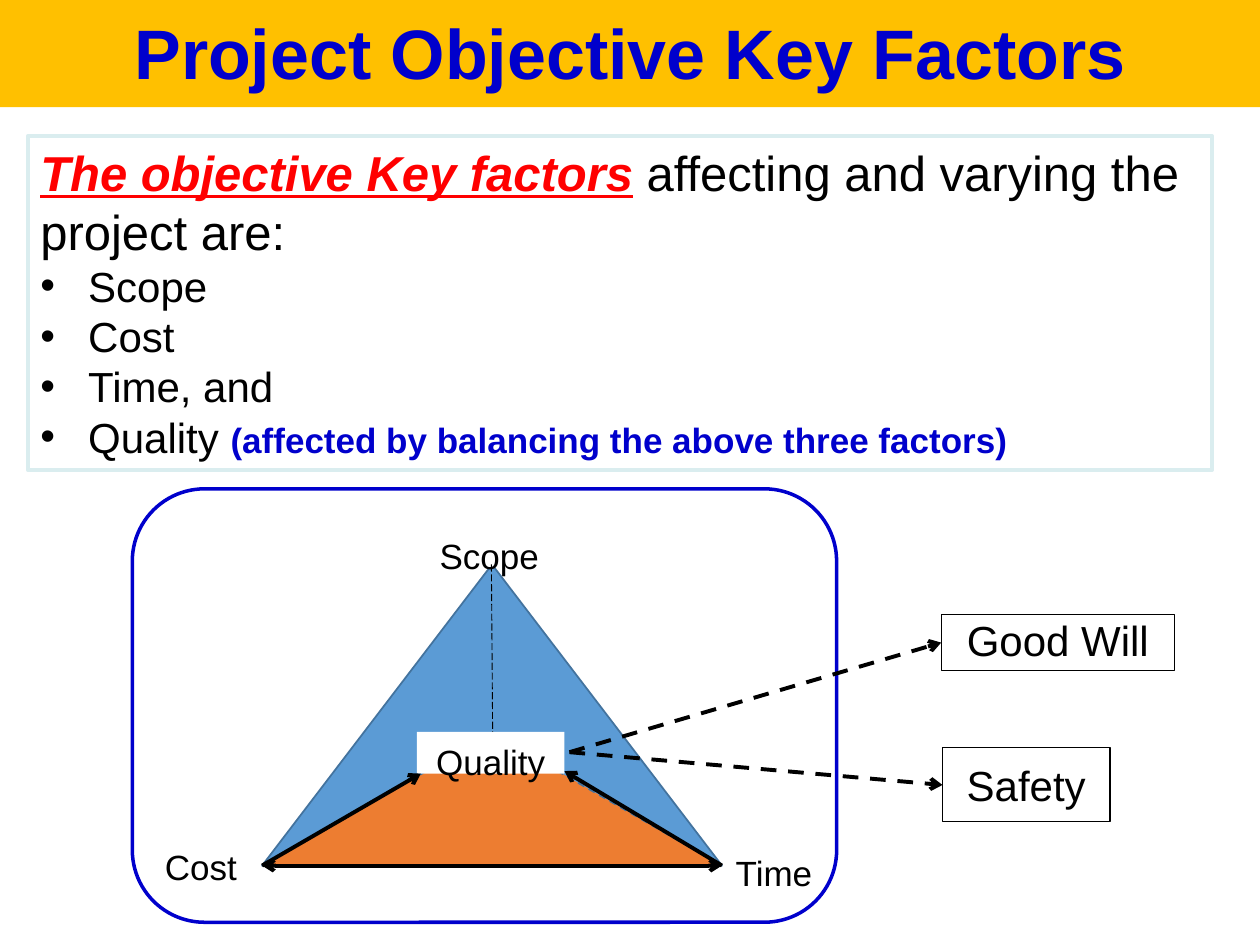
from pptx import Presentation
from pptx import util as u
from pptx.dml.color import RGBColor
from pptx.enum import dml, shapes, text
from pptx.oxml.ns import qn
from lxml import etree

COLORS = {"gold": "FFC000", "navy": "0000CC", "red": "FF0000", "black": "000000",
          "white": "FFFFFF", "blue": "5B9BD5", "steel": "43739E",
          "orange": "ED7D31", "mint": "DAEDEF"}
SHAPE = shapes.MSO_SHAPE
DASH = dml.MSO_LINE
ALIGN = text.PP_ALIGN
ANCHOR = text.MSO_ANCHOR


class SlideKit:
    font = "Arial"

    def __init__(self, prs):
        self.slide = prs.slides.add_slide(prs.slide_layouts[1])

    def place(self, sp, box):
        sp.left, sp.top, sp.width, sp.height = (u.Inches(v) for v in box)

    def paint(self, sp, fill=None, line=None, width=1, dash=None):
        if fill:
            sp.fill.solid()
            sp.fill.fore_color.rgb = RGBColor.from_string(COLORS[fill])
        else:
            sp.fill.background()
        if line:
            self.stroke(sp.line, line, width, dash)
        else:
            sp.line.fill.background()

    def stroke(self, line, color, width, dash=None):
        line.color.rgb = RGBColor.from_string(COLORS[color])
        line.width = u.Pt(width)
        if dash:
            line.dash_style = dash

    def run(self, p, words, size, color="black", **style):
        r = p.add_run()
        r.text = words
        r.font.color.rgb = RGBColor.from_string(COLORS[color])
        for name, value in {"name": self.font, "size": u.Pt(size), "bold": False, **style}.items():
            setattr(r.font, name, value)

    def frame(self, sp, **values):
        tf = sp.text_frame
        defaults = {"word_wrap": True, "auto_size": text.MSO_AUTO_SIZE.NONE,
                    "vertical_anchor": ANCHOR.TOP}
        for name, value in {**defaults, **values}.items():
            setattr(tf, name, value)
        return tf

    def title(self, words, box):
        sp = self.slide.shapes.title
        self.place(sp, box)
        self.paint(sp, "gold")
        p = self.frame(sp, vertical_anchor=ANCHOR.MIDDLE).paragraphs[0]
        p.alignment = ALIGN.CENTER
        self.run(p, words, 40, "navy", bold=True)

    def body(self, paragraphs, box):
        """Fill the body: the first paragraph is plain, the rest are bulleted."""
        sp = self.slide.placeholders[1]
        self.place(sp, box)
        self.paint(sp, None, "mint", 2.25)
        tf = self.frame(sp)
        for i, runs in enumerate(paragraphs):
            p = tf.add_paragraph() if i else tf.paragraphs[0]
            p.space_before = u.Pt(0)
            p.line_spacing = 1.0
            self.bullet(p, "•" if i else None)
            for words, size, style in runs:
                self.run(p, words, size, **style)

    def bullet(self, p, char):
        pPr = p._p.get_or_add_pPr()
        indent = u.Inches(0.38) if char else 0
        pPr.set("marL", str(indent))
        pPr.set("indent", str(-indent))
        if char:
            etree.SubElement(pPr, qn("a:buFont")).set("typeface", self.font)
            etree.SubElement(pPr, qn("a:buChar")).set("char", char)
        else:
            etree.SubElement(pPr, qn("a:buNone"))

    def shape(self, kind, box, **look):
        sp = self.slide.shapes.add_shape(kind, *(u.Inches(v) for v in box))
        sp.shadow.inherit = False
        self.paint(sp, **look)
        return sp

    def label(self, words, box, align=ALIGN.LEFT):
        sp = self.shape(SHAPE.RECTANGLE, box, fill="white")
        p = self.frame(sp).paragraphs[0]
        p.alignment, p.line_spacing, p.space_after = align, 1.06, u.Pt(8)
        self.run(p, words, 20)

    def outcome(self, words, box, top=0):
        sp = self.shape(SHAPE.RECTANGLE, box, fill="white", line="black", width=0.75)
        tf = self.frame(sp, margin_left=0, margin_right=0, margin_bottom=0,
                        margin_top=u.Inches(top))
        p = tf.paragraphs[0]
        p.alignment = ALIGN.CENTER
        self.run(p, words, 24)

    def line(self, start, end, width=2.25, dash=None, arrows=()):
        ends = (u.Inches(v) for v in (*start, *end))
        c = self.slide.shapes.add_connector(shapes.MSO_CONNECTOR.STRAIGHT, *ends)
        self.stroke(c.line, "black", width, dash)
        for tag in arrows:
            etree.SubElement(c.line._get_or_add_ln(), qn(tag)).set("type", "arrow")
        etree.SubElement(c._element.spPr, qn("a:effectLst"))


def main():
    prs = Presentation()
    prs.slide_width, prs.slide_height = u.Inches(10), u.Inches(7.5)
    s = SlideKit(prs)
    head, tail = "a:headEnd", "a:tailEnd"

    s.title("Project Objective Key Factors", (0, -0.03, 10, 0.88))
    intro = [("The objective Key factors", 28,
              {"color": "red", "bold": True, "italic": True, "underline": True}),
             (" affecting and varying the project are:", 28, {})]
    factors = [[(word, 24, {})] for word in ("Scope", "Cost", "Time, and", "Quality ")]
    factors[-1].append(("(affected by balancing the above three factors)", 20,
                        {"color": "navy", "bold": True}))
    s.body([intro, *factors], (0.22, 1.08, 9.4, 2.65))

    left, right, top, middle, base = 2.08, 5.73, 4.48, 5.82, 6.87
    for y, fill, dash in ((top, "blue", None), (middle, "orange", DASH.DASH)):
        s.shape(SHAPE.ISOSCELES_TRIANGLE, (left, y, right - left, base - y),
                fill=fill, line="steel", dash=dash)
    s.label("Cost", (1.21, 6.64, 0.84, 0.41))
    s.label("Time", (5.74, 6.69, 0.88, 0.36))
    s.label("Scope", (3.39, 4.17, 1.09, 0.33))
    s.line((3.9, top), (3.91, middle), 0.5, DASH.LONG_DASH)
    s.label("Quality", (3.31, 5.81, 1.17, 0.33), ALIGN.CENTER)
    s.shape(SHAPE.ROUNDED_RECTANGLE, (1.05, 3.88, 5.59, 3.44), line="navy", width=2)

    s.line((4.48, 6.12), (right, base), arrows=[head])
    s.line((3.34, 6.14), (left, base), arrows=[head])
    s.line((right, base), (left, base), arrows=[head, tail])

    s.outcome("Good Will", (7.47, 4.88, 1.85, 0.44))
    s.outcome("Safety", (7.48, 5.93, 1.33, 0.59), top=0.1)
    for end in ((7.48, 6.23), (7.47, 5.1)):
        s.line((4.52, 5.97), end, dash=DASH.DASH, arrows=[tail])
    prs.save("out.pptx")


if __name__ == "__main__":
    main()
